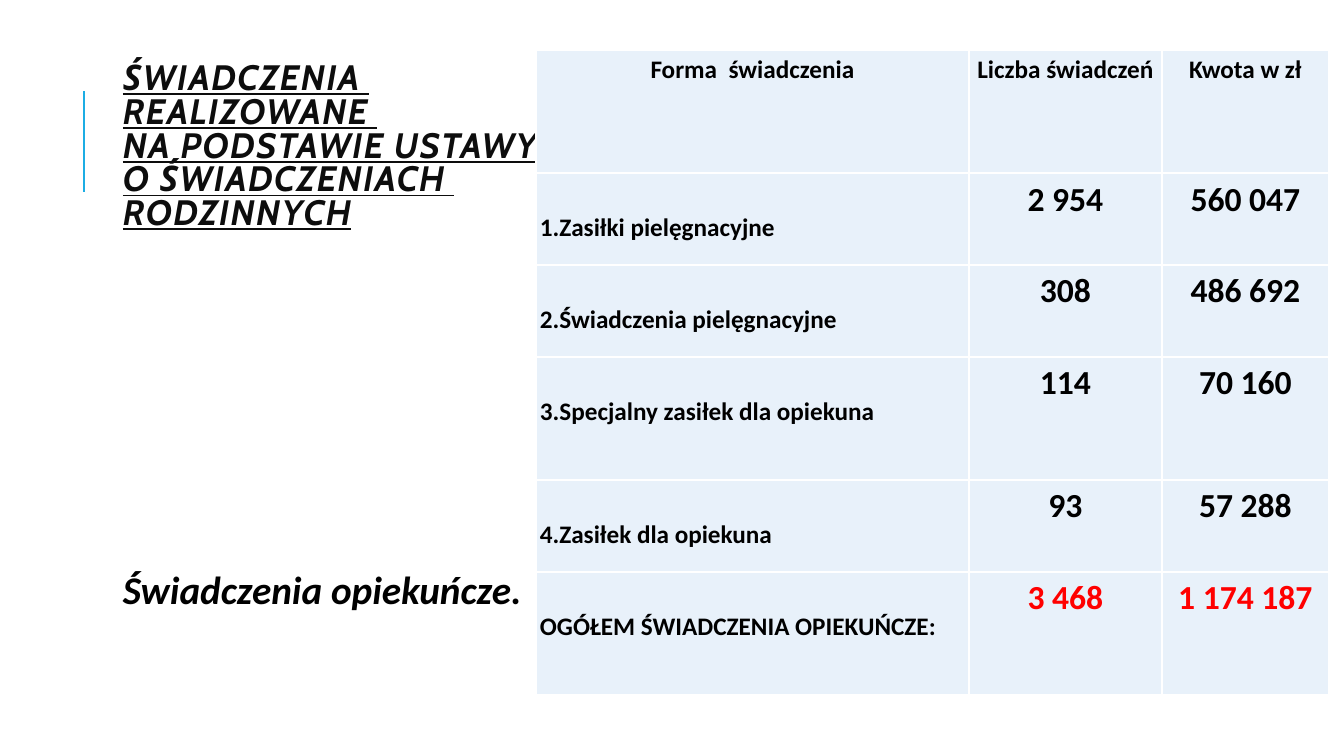
from lxml import etree
from pptx import Presentation
from pptx import util as u
from pptx.dml.color import RGBColor
from pptx.enum import shapes, text
from pptx.oxml.ns import qn

PX = 914400 / 100.8
BLACK, RED, WHITE = "000000", "FF0000", "FFFFFF"
TITLE_INK, ACCENT, CELL_BLUE = "0D0D0D", "1CADE4", "E8F1FA"

TITLE_LINES = [
    "ŚWIADCZENIA ",
    "REALIZOWANE ",
    "NA PODSTAWIE USTAWY ",
    "O ŚWIADCZENIACH ",
    "RODZINNYCH",
]
BENEFITS = [
    ("Forma  świadczenia", "Liczba świadczeń", "Kwota w zł"),
    ("1.Zasiłki pielęgnacyjne", "2 954", "560 047"),
    ("2.Świadczenia pielęgnacyjne", "308", "486 692"),
    ("3.Specjalny zasiłek dla opiekuna", "114", "70 160"),
    ("4.Zasiłek dla opiekuna", "93", "57 288"),
    ("OGÓŁEM ŚWIADCZENIA OPIEKUŃCZE:", "3 468", "1 174 187"),
]
COLUMN_WIDTHS = [433, 193, 167]
ROW_HEIGHTS = [123, 92, 92, 123, 92, 123]
LABEL_DROP = 35


def px(length):
    return u.Emu(round(length * PX))


def rgb(value):
    return RGBColor.from_string(value)


def style(paragraph, face, size, color, spacing, italic=False):
    paragraph.line_spacing = spacing
    font = paragraph.font
    font.name, font.size, font.bold = face, u.Pt(size), True
    font.color.rgb = rgb(color)
    if italic:
        font.italic = True


def add_text(slide, box, words, anchor):
    frame = slide.shapes.add_textbox(*map(px, box)).text_frame
    frame.word_wrap = True
    frame.vertical_anchor = anchor
    frame.text = words
    return frame.paragraphs[0]


def add_title(slide):
    title = add_text(slide, (113, 52, 484, 192), "\v".join(TITLE_LINES),
                     text.MSO_ANCHOR.MIDDLE)
    style(title, "Cabin", 25.2, TITLE_INK, 0.8, italic=True)
    title.font.underline = True
    title._p.pPr.find(qn("a:defRPr")).set("spc", "100")


def add_accent_line(slide):
    accent = slide.shapes.add_connector(
        shapes.MSO_CONNECTOR.STRAIGHT, px(84), px(192), px(84), px(91))
    accent.line.color.rgb = rgb(ACCENT)
    accent.line.width = u.Pt(1.5)
    etree.SubElement(accent._element.spPr, qn("a:effectLst"))


def add_borders(cell):
    properties = cell._tc.get_or_add_tcPr()
    for position, side in enumerate(("lnL", "lnR", "lnT", "lnB")):
        border = etree.Element(qn("a:" + side), w=str(u.Pt(1)))
        fill = etree.SubElement(border, qn("a:solidFill"))
        etree.SubElement(fill, qn("a:srgbClr"), val=WHITE)
        properties.insert(position, border)


def fill_cell(cell, words, is_header, is_label, is_total):
    cell.fill.solid()
    cell.fill.fore_color.rgb = rgb(CELL_BLUE)
    add_borders(cell)
    cell.margin_left = cell.margin_right = px(4)
    cell.margin_top = px(LABEL_DROP if is_label else 0)
    cell.margin_bottom = 0
    cell.text = words
    paragraph = cell.text_frame.paragraphs[0]
    paragraph.alignment = text.PP_ALIGN.LEFT if is_label else text.PP_ALIGN.CENTER
    size = 18 if is_header or is_label else 24
    color = RED if is_total and not is_label else BLACK
    style(paragraph, "Calibri", size, color, 1.15)


def add_benefit_table(slide):
    table = slide.shapes.add_table(
        len(BENEFITS), len(COLUMN_WIDTHS), px(536), px(50),
        px(sum(COLUMN_WIDTHS)), px(sum(ROW_HEIGHTS))).table
    table.first_row = table.horz_banding = False
    for column, width in zip(table.columns, COLUMN_WIDTHS):
        column.width = px(width)
    for r, (benefit, height) in enumerate(zip(BENEFITS, ROW_HEIGHTS)):
        table.rows[r].height = px(height)
        for c, words in enumerate(benefit):
            fill_cell(table.cell(r, c), words, is_header=r == 0,
                      is_label=r > 0 and c == 0,
                      is_total=r == len(BENEFITS) - 1)


def add_care_caption(slide):
    caption = add_text(slide, (113, 557, 484, 64), "Świadczenia opiekuńcze.",
                       text.MSO_ANCHOR.TOP)
    style(caption, "Calibri", 28, BLACK, 1.08, italic=True)


def main():
    deck = Presentation()
    deck.slide_width, deck.slide_height = px(1344), px(756)
    slide = deck.slides.add_slide(deck.slide_layouts[6])
    add_accent_line(slide)
    add_title(slide)
    add_benefit_table(slide)
    add_care_caption(slide)
    deck.save("out.pptx")


if __name__ == "__main__":
    main()
